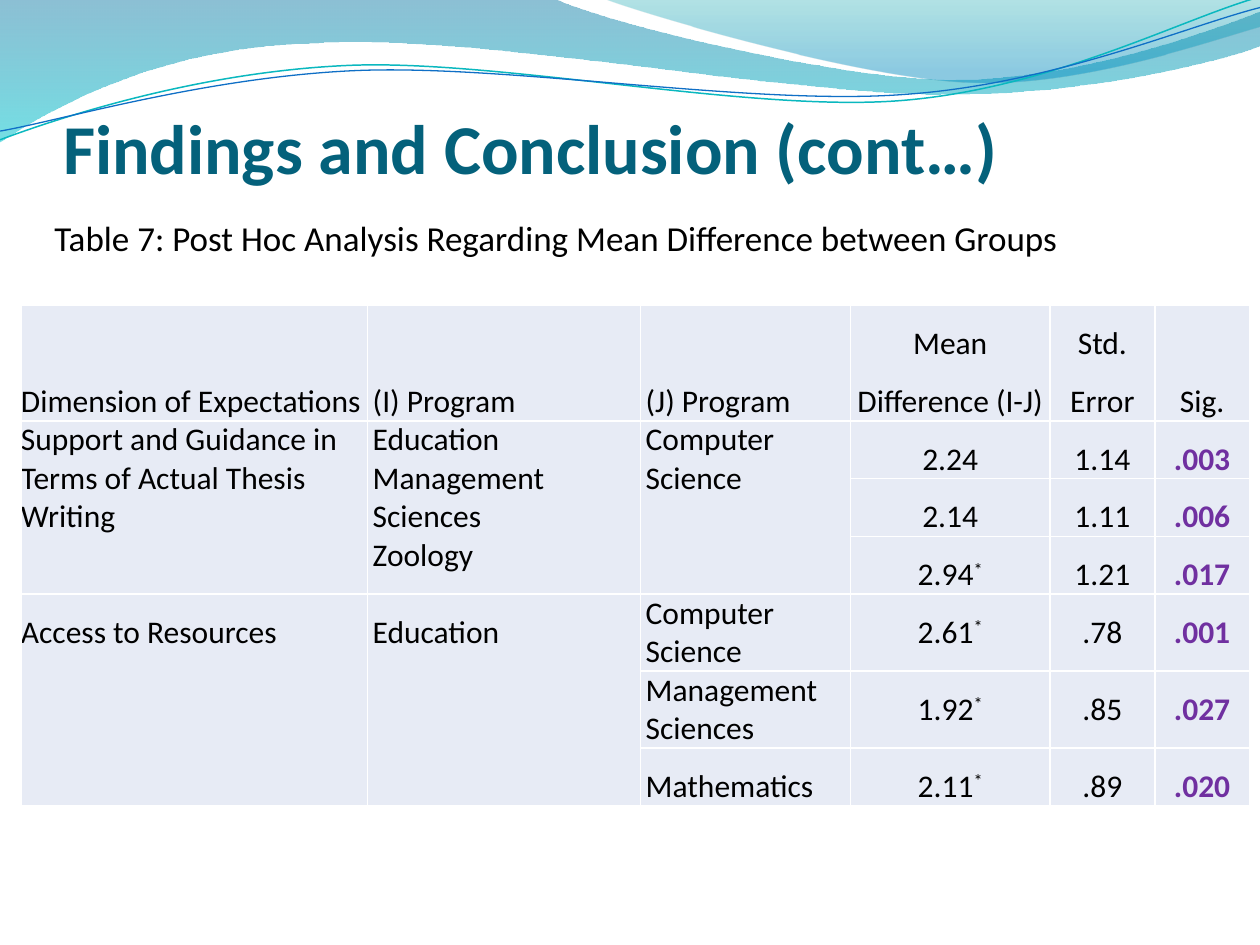
import pptx
import pptx.util
import pptx.dml.color
import pptx.enum.text
import pptx.enum.shapes
import pptx.oxml
import pptx.oxml.ns
import lxml.etree

Pt = pptx.util.Pt
RGB = pptx.dml.color.RGBColor.from_string
qn = pptx.oxml.ns.qn
Align = pptx.enum.text.PP_ALIGN
Anchor = pptx.enum.text.MSO_ANCHOR

theme = dict(font="Calibri", title="04617B", ink="000000", sig="7030A0",
             cell="E7EBF5", white="FFFFFF", big=40, mid=20, body=18)


def write(para, text, size, color, bold=False):
    run = para.add_run()
    run.text = text
    font = run.font
    font.name, font.size, font.bold = theme["font"], Pt(size), bold
    font.color.rgb = RGB(color)
    return run


def trace(shapes, start, parts, close):
    """Outline from lines (2 numbers) and cubic curves (6 numbers), in points."""
    dots = [(Pt(part[i]), Pt(part[i + 1]))
            for part in parts for i in range(0, len(part), 2)]
    pen = shapes.build_freeform(Pt(start[0]), Pt(start[1]))
    pen.add_line_segments(dots, close=close)
    shape = pen.convert_to_shape()
    shape.shadow.inherit = False
    # Join each three steps of a curve into one cubic
    steps = iter(list(shape._element.iter(qn("a:lnTo"))))
    for part in parts:
        group = [next(steps) for i in range(len(part) // 2)]
        if len(group) == 3:
            curve = lxml.etree.Element(qn("a:cubicBezTo"))
            group[0].addprevious(curve)
            for step in group:
                curve.append(step[0])
                step.getparent().remove(step)
    return shape


prs = pptx.Presentation()
prs.slide_width, prs.slide_height = Pt(720), Pt(540)
slide = prs.slides.add_slide(prs.slide_layouts[5])
shapes = slide.shapes

# Translucent wave bands: start, parts, stops (place, colour, opacity)
bands = [
    ((0, 0), [(316.8, -0.7), (342.7, 12.2, 478.1, 45.4, 545.8, 45.4),
              (614.2, 45.4, 689.8, 18.7, 720, 6.5), (720.7, 25.9),
              (707.8, 31.7, 626.4, 54.7, 537.1, 54),
              (447.8, 54, 275, 20.2, 185, 24.5),
              (92.9, 25.9, 33.1, 59.8, -0.7, 81.4)],
     [(0, "0074A1", 45), (1, "00C6CF", 55)]),
    ((344.9, -0.7), [(366.5, 7.9, 491, 44.6, 553.7, 46.8),
                     (616.3, 49.7, 691.9, 23, 720, 15.1), (720, 0)],
     [(0, "00A1A9", 30), (0.8, "008BBF", 45)]),
]
for start, parts, stops in bands:
    band = trace(shapes, start, parts, True)
    band.line.fill.background()
    band.fill.gradient()
    band.fill.gradient_angle = 270
    for stop, (place, color, alpha) in zip(band.fill.gradient_stops, stops):
        stop.position = place
        stop.color.rgb = RGB(color)
    tints = band._element.spPr.iter(qn("a:srgbClr"))
    for tint, (place, color, alpha) in zip(tints, stops):
        lxml.etree.SubElement(tint, qn("a:alpha")).set("val", str(alpha * 1000))

# Thin wave lines
waves = [
    ((0, 79.9), [(34.6, 67, 113.8, 41, 199.4, 37.4),
                 (284.4, 33.8, 427, 64.1, 513.4, 57.6),
                 (599.8, 51.1, 675.4, 10.8, 718.6, -1.4)], "0AB8BF", 0.85),
    ((0, 74.9), [(33.8, 69.1, 118.1, 43.9, 203.8, 40.3),
                 (290.2, 36.7, 429.8, 60.5, 516.2, 54),
                 (601.9, 48.2, 677.5, 15.1, 720, 4.3)], "0F6FC6", 0.75),
]
for start, parts, color, width in waves:
    wave = trace(shapes, start, parts, False)
    wave.fill.background()
    wave.line.color.rgb = RGB(color)
    wave.line.width = Pt(width)

# Title, in front of the waves
title = shapes.title
title.left, title.top, title.width, title.height = Pt(36), Pt(18), Pt(648), Pt(90)
frame = title.text_frame
frame.auto_size = pptx.enum.text.MSO_AUTO_SIZE.NONE
frame.vertical_anchor = Anchor.BOTTOM
frame.margin_left = frame.margin_right = frame.margin_bottom = 0
frame.margin_top = Pt(3.6)
frame.paragraphs[0].alignment = Align.LEFT
write(frame.paragraphs[0], "Findings and Conclusion (cont…)",
      theme["big"], theme["title"], True)
shapes._spTree.append(title._element)

# Table: a cell holds its paragraphs, one per line; None is merged away
heads = ["Dimension of Expectations", "(I) Program", "(J) Program",
         "Mean Difference (I-J)", "Std. Error", "Sig."]
rows = [
    heads,
    ["Support and Guidance in Terms of Actual Thesis Writing",
     "Education\nManagement Sciences\nZoology", "Computer Science",
     "2.24", "1.14", ".003"],
    [None, None, None, "2.14", "1.11", ".006"],
    [None, None, None, "2.94*", "1.21", ".017"],
    ["Access to Resources", "Education", "Computer Science",
     "2.61*", ".78", ".001"],
    [None, None, "Management Sciences", "1.92*", ".85", ".027"],
    [None, None, "Mathematics", "2.11*", ".89", ".020"],
]
tight = {(0, 0), (1, 0), (1, 1), (1, 2), (4, 2), (5, 2)}  # single spacing
wide = [198, 156, 120, 114, 60, 54]
high = [66, 33, 33, 33, 44, 44, 33]
table = shapes.add_table(len(rows), len(wide), Pt(12), Pt(174.5),
                         Pt(sum(wide)), Pt(sum(high))).table
table.first_row = table.horz_banding = False
for col, width in zip(table.columns, wide):
    col.width = Pt(width)
for row, height in zip(table.rows, high):
    row.height = Pt(height)
for r, c in [(1, 0), (1, 1), (1, 2), (4, 0), (4, 1)]:
    table.cell(r, c).merge(table.cell(r + 2, c))

for r, row in enumerate(rows):
    for c, text in enumerate(row):
        cell = table.cell(r, c)
        cell.margin_left = cell.margin_right = 0
        cell.margin_top = cell.margin_bottom = 0
        cell.vertical_anchor = Anchor.TOP if r else Anchor.BOTTOM
        props = cell._tc.get_or_add_tcPr()
        for side in ("lnL", "lnR", "lnT", "lnB"):
            edge = lxml.etree.SubElement(props, qn("a:" + side), w=str(Pt(1)))
            fill = lxml.etree.SubElement(edge, qn("a:solidFill"))
            lxml.etree.SubElement(fill, qn("a:srgbClr"), val=theme["white"])
        cell.fill.solid()
        cell.fill.fore_color.rgb = RGB(theme["cell"])
        if text is None:
            continue
        sig = r > 0 and c == 5
        for i, line in enumerate(text.split("\n")):
            frame = cell.text_frame
            para = frame.add_paragraph() if i else frame.paragraphs[0]
            para.alignment = Align.CENTER if c > 2 else Align.LEFT
            para.line_spacing = 1.0 if (r, c) in tight else 1.5
            if c:
                for side in ("marL", "marR"):
                    para._p.get_or_add_pPr().set(side, str(Pt(3)))
            write(para, line.rstrip("*"), theme["body"],
                  theme["sig" if sig else "ink"], sig)
            if line.endswith("*"):
                star = write(para, "*", theme["body"], theme["ink"])
                star._r.get_or_add_rPr().set("baseline", "30000")

# Table caption
note = shapes.add_shape(pptx.enum.shapes.MSO_SHAPE.RECTANGLE,
                        Pt(24), Pt(120), Pt(648), Pt(31.5))
note.shadow.inherit = False
note.fill.solid()
note.fill.fore_color.rgb = RGB(theme["white"])
note.line.fill.background()
note.text_frame.word_wrap = True
note.text_frame.vertical_anchor = Anchor.MIDDLE
para = note.text_frame.paragraphs[0]
para.alignment = Align.LEFT
write(para, "Table 7: Post Hoc Analysis Regarding Mean Difference between Groups",
      theme["mid"], theme["ink"])

prs.save("out.pptx")
